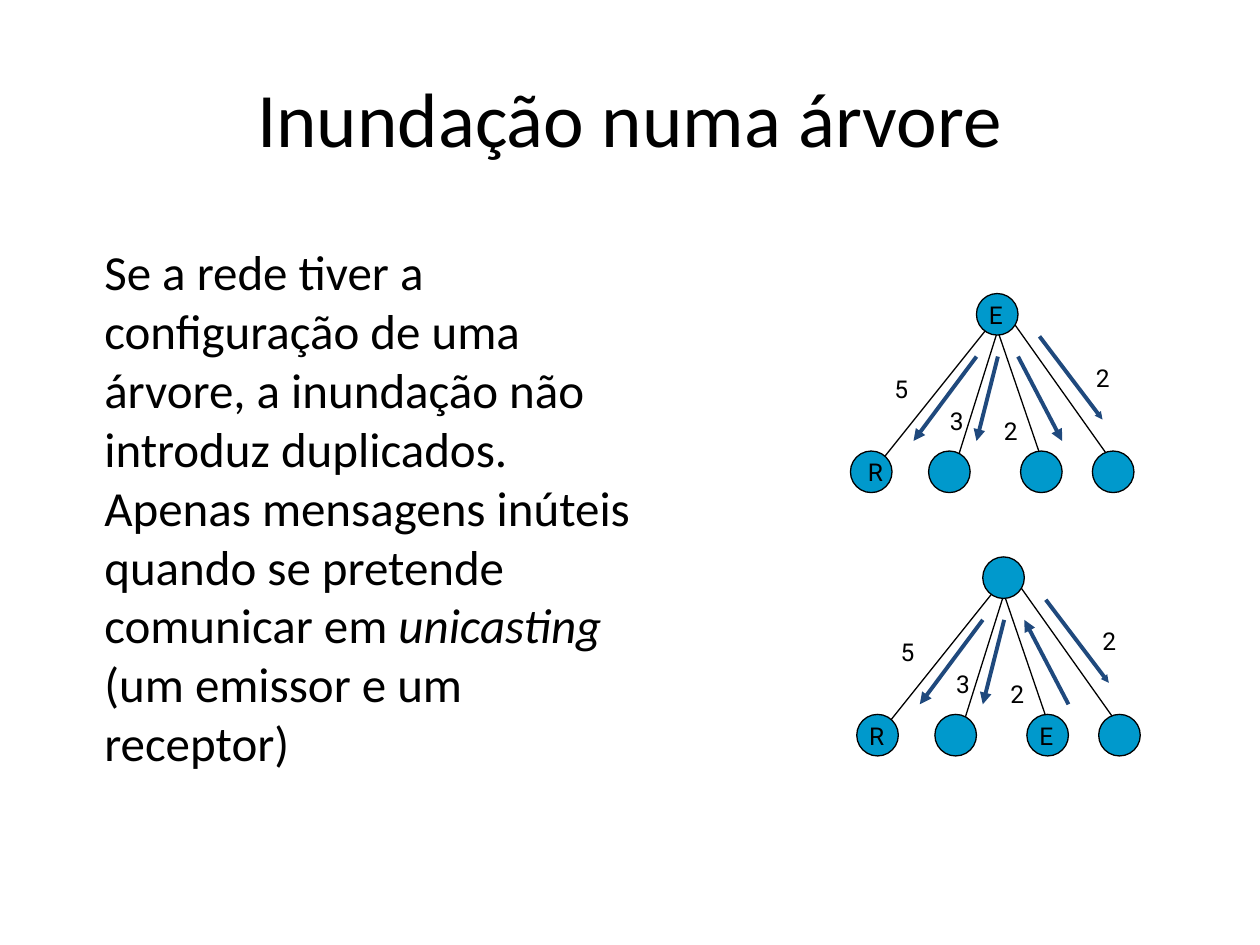
from lxml import etree
from pptx import Presentation
from pptx.dml.color import RGBColor
from pptx.enum.shapes import MSO_CONNECTOR, MSO_SHAPE
from pptx.enum.text import MSO_ANCHOR, PP_ALIGN
from pptx.oxml.ns import qn
from pptx.util import Inches, Pt

STRAIGHT, OVAL = MSO_CONNECTOR.STRAIGHT, MSO_SHAPE.OVAL
TOP, MIDDLE = MSO_ANCHOR.TOP, MSO_ANCHOR.MIDDLE
LEFT, CENTER = PP_ALIGN.LEFT, PP_ALIGN.CENTER

WIDTH, HEIGHT = 10, 7.5
COLORS = {"text": "000000", "edge": "000000", "node": "0099CC", "message": "1F497D"}

TITLE = "Inundação numa árvore"
BODY = [
    ("Se a rede tiver a configuração de uma árvore, a inundação não introduz "
     "duplicados. Apenas mensagens inúteis quando se pretende comunicar em ", False),
    ("unicasting", True),
    (" (um emissor e um receptor)", False),
]

# Tree geometry in inches, measured from each tree's top left corner
NODE = 0.33
LABEL_WIDTH = 0.27
ROOT = (1, 0)
LEAF_TOP = 1.25
BRANCHES = [
    {"leaf": 0, "edge": ((1.17, 0.17), (0.17, 1.42)),
     "message": ((1, 0.5), (0.5, 1.17)), "cost": "5", "cost_at": (0.25, 0.59), "head": "med"},
    {"leaf": 0.62, "edge": ((1.17, 0.29), (0.79, 1.5)),
     "message": ((1.17, 0.5), (1, 1.17)), "cost": "3", "cost_at": (0.69, 0.84), "head": "med"},
    {"leaf": 1.35, "edge": ((1.17, 0.3), (1.58, 1.5)),
     "message": ((1.33, 0.5), (1.68, 1.17)), "cost": "2", "cost_at": (1.12, 0.92), "head": "med"},
    {"leaf": 1.92, "edge": ((1.25, 0.17), (2.08, 1.34)),
     "message": ((1.5, 0.34), (2, 1)), "cost": "2", "cost_at": (1.85, 0.5), "head": "sm"},
]
# "upward" lists the branches whose message climbs to the root
TREES = [
    {"origin": (6.75, 2.33), "root": "E", "leaves": ["R", "", "", ""],
     "upward": [], "leaf_label_shift": 0.04},
    {"origin": (6.8, 4.42), "root": "", "leaves": ["R", "", "E", ""],
     "upward": [2], "leaf_label_shift": 0},
]


def color(key):
    return RGBColor.from_string(COLORS[key])


def add_text(slide, runs, left, top, width, height, *, size=14, font="Roboto",
             align=LEFT, anchor=TOP, before=0):
    """Add a text box holding one paragraph of (text, italic) runs."""
    frame = slide.shapes.add_textbox(
        Inches(left), Inches(top), Inches(width), Inches(height)).text_frame
    frame.word_wrap = True
    frame.vertical_anchor = anchor
    paragraph = frame.paragraphs[0]
    paragraph.alignment = align
    paragraph.space_before = Pt(before)
    for text, italic in runs:
        run = paragraph.add_run()
        run.text = text
        run.font.size = Pt(size)
        run.font.name = font
        run.font.italic = italic
        run.font.color.rgb = color("text")


def add_line(slide, start, end, *, stroke, weight, head=None):
    """Add a straight line, with an arrowhead of size `head` at its end."""
    line = slide.shapes.add_connector(
        STRAIGHT, *(Inches(value) for value in (*start, *end)))
    line.line.color.rgb = color(stroke)
    line.line.width = Pt(weight)
    properties = line._element.spPr
    if head:
        etree.SubElement(properties.find(qn("a:ln")), qn("a:tailEnd"),
                         type="triangle", w=head, len=head)
    etree.SubElement(properties, qn("a:effectLst"))


def add_node(slide, left, top):
    node = slide.shapes.add_shape(
        OVAL, Inches(left), Inches(top), Inches(NODE), Inches(NODE))
    node.shadow.inherit = False
    node.fill.solid()
    node.fill.fore_color.rgb = color("node")
    node.line.color.rgb = color("edge")
    node.line.width = Pt(0.75)


def add_tree(slide, tree):
    def place(point):
        return tuple(base + offset for base, offset in zip(tree["origin"], point))

    for index, branch in enumerate(BRANCHES):
        start, end = map(place, branch["edge"])
        add_line(slide, start, end, stroke="edge", weight=0.75)
        start, end = map(place, branch["message"])
        if index in tree["upward"]:
            start, end = end, start
        add_line(slide, start, end, stroke="message", weight=2.25, head=branch["head"])
        add_text(slide, [(branch["cost"], False)], *place(branch["cost_at"]),
                 LABEL_WIDTH, NODE)

    nodes = [(tree["root"], ROOT, 0)]
    for label, branch in zip(tree["leaves"], BRANCHES):
        nodes.append((label, (branch["leaf"], LEAF_TOP), tree["leaf_label_shift"]))
    for label, position, shift in nodes:
        left, top = place(position)
        add_node(slide, left, top)
        if label:
            add_text(slide, [(label, False)], left + shift, top, LABEL_WIDTH, NODE)


def main():
    deck = Presentation()
    deck.slide_width, deck.slide_height = Inches(WIDTH), Inches(HEIGHT)
    slide = deck.slides.add_slide(deck.slide_layouts[6])
    add_text(slide, [(TITLE, False)], 0.05 * WIDTH, 0.04 * HEIGHT, 0.9 * WIDTH, 1.25,
             size=44, font="Calibri", align=CENTER, anchor=MIDDLE)
    add_text(slide, BODY, 0.73, 1.87, 4.54, 4.99, size=28, font="Calibri", before=5.6)
    for tree in TREES:
        add_tree(slide, tree)
    deck.save("out.pptx")


if __name__ == "__main__":
    main()
